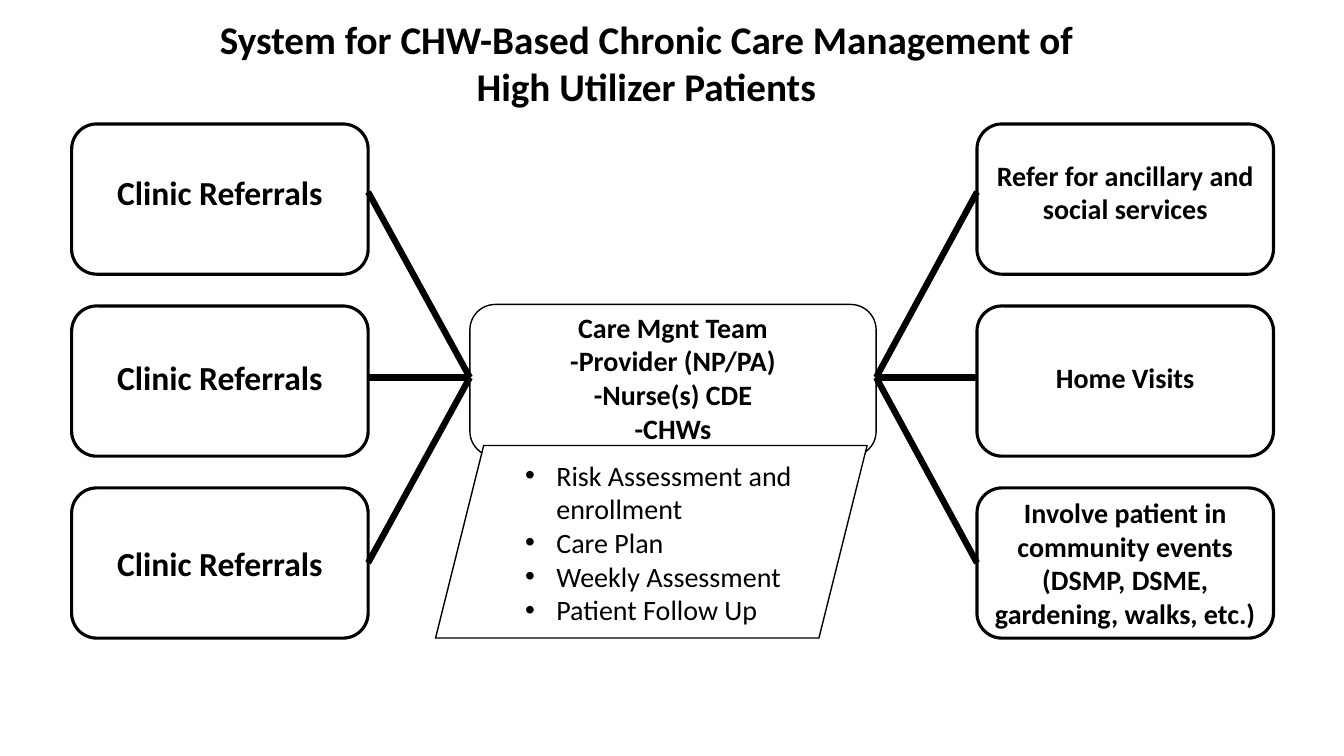
from lxml import etree
from pptx import Presentation
from pptx.dml.color import RGBColor
from pptx.enum.shapes import MSO_CONNECTOR, MSO_SHAPE
from pptx.enum.text import MSO_ANCHOR, MSO_AUTO_SIZE, PP_ALIGN
from pptx.oxml.ns import qn
from pptx.util import Inches, Pt

ROUNDED = MSO_SHAPE.ROUNDED_RECTANGLE
PARALLELOGRAM = MSO_SHAPE.PARALLELOGRAM
STRAIGHT = MSO_CONNECTOR.STRAIGHT
MIDDLE = MSO_ANCHOR.MIDDLE
NO_FIT = MSO_AUTO_SIZE.NONE
CENTER, LEFT = PP_ALIGN.CENTER, PP_ALIGN.LEFT

COLORS = {"ink": "000000", "paper": "FFFFFF"}
FONT = "Calibri"
BULLET_INDENT = Inches(0.31)

SIDE_WIDTH, SIDE_HEIGHT = 22.06, 19.87
REFERRAL_LEFT, SERVICE_LEFT = 5.33, 72.69
TEAM_LEFT, TEAM_WIDTH = 34.96, 30.23
FIRST_BOX_TOP, BOX_STEP = 16.4, 24.07
FIRST_CENTER, CENTER_STEP = 25.4, 24.53
TEAM_CENTER = FIRST_CENTER + CENTER_STEP

REFERRAL = "Clinic Referrals"
REFERRAL_TEXT_HEIGHT = 6.67
SERVICES = [
    ("Refer for ancillary and social services", 10.27),
    ("Home Visits", 5.87),
    ("Involve patient in community events (DSMP, DSME, gardening, walks, etc.)", 19.33),
]
TEAM = ["Care Mgnt Team", "-Provider (NP/PA)", "-Nurse(s) CDE", "-CHWs"]
TASKS = ["Risk Assessment and enrollment", "Care Plan", "Weekly Assessment", "Patient Follow Up"]


def color(name):
    return RGBColor.from_string(COLORS[name])


class SlideBuilder:
    def __init__(self, presentation):
        self.width = presentation.slide_width
        self.height = presentation.slide_height
        self.slide = presentation.slides.add_slide(presentation.slide_layouts[5])

    def across(self, percent):
        return round(self.width * percent / 100)

    def down(self, percent):
        return round(self.height * percent / 100)

    def place(self, left, top, width, height):
        return self.across(left), self.down(top), self.across(width), self.down(height)

    def fill_text(self, shape, lines, size, bold=True, bulleted=False):
        frame = shape.text_frame
        frame_format = {"word_wrap": True, "auto_size": NO_FIT, "vertical_anchor": MIDDLE}
        for name, value in frame_format.items():
            setattr(frame, name, value)
        frame.text = "\n".join(lines)
        for paragraph in frame.paragraphs:
            paragraph.alignment = LEFT if bulleted else CENTER
            if bulleted:
                self.add_bullet(paragraph)
            for name, value in {"name": FONT, "size": Pt(size), "bold": bold}.items():
                setattr(paragraph.font, name, value)
            paragraph.font.color.rgb = color("ink")

    def add_bullet(self, paragraph):
        properties = paragraph._p.get_or_add_pPr()
        properties.set("marL", str(BULLET_INDENT))
        properties.set("indent", str(-BULLET_INDENT))
        etree.SubElement(properties, qn("a:buFont")).set("typeface", "Arial")
        etree.SubElement(properties, qn("a:buChar")).set("char", "•")

    def title(self, area, lines, size):
        shape = self.slide.shapes.title
        sides = zip(("left", "top", "width", "height"), self.place(*area))
        for name, value in sides:
            setattr(shape, name, value)
        self.fill_text(shape, lines, size)

    def box(self, kind, area, line_width):
        shape = self.slide.shapes.add_shape(kind, *self.place(*area))
        shape.shadow.inherit = False
        shape.fill.solid()
        shape.fill.fore_color.rgb = color("paper")
        shape.line.color.rgb = color("ink")
        shape.line.width = Pt(line_width)

    def text(self, area, lines, size, **style):
        shape = self.slide.shapes.add_textbox(*self.place(*area))
        self.fill_text(shape, lines, size, **style)

    def line(self, start, end, line_width=4.5):
        points = [convert(value) for point in (start, end)
                  for convert, value in zip((self.across, self.down), point)]
        connector = self.slide.shapes.add_connector(STRAIGHT, *points)
        connector.line.color.rgb = color("ink")
        connector.line.width = Pt(line_width)
        etree.SubElement(connector._element.spPr, qn("a:effectLst"))

    def side_box(self, left, row, label, text_height, size):
        top = FIRST_BOX_TOP + row * BOX_STEP
        self.box(ROUNDED, (left, top, SIDE_WIDTH, SIDE_HEIGHT), 2.25)
        text_top = FIRST_CENTER + row * CENTER_STEP - text_height / 2
        self.text((left, text_top, SIDE_WIDTH, text_height), [label], size)


def main():
    presentation = Presentation()
    presentation.slide_width = Inches(13.33)
    presentation.slide_height = Inches(7.5)
    builder = SlideBuilder(presentation)

    builder.title((5.33, 1.33, 85.5, 13.87),
                  ["System for CHW-Based Chronic Care Management of",
                   "High Utilizer Patients"], 28)
    for row, (service, text_height) in enumerate(SERVICES):
        builder.side_box(REFERRAL_LEFT, row, REFERRAL, REFERRAL_TEXT_HEIGHT, 24)
        builder.side_box(SERVICE_LEFT, row, service, text_height, 20)

    builder.box(ROUNDED, (TEAM_LEFT, 40.27, TEAM_WIDTH, 20.13), 1)
    builder.text((TEAM_LEFT, 40.27, TEAM_WIDTH, 19.33), TEAM, 20)

    for row in range(len(SERVICES)):
        center = FIRST_CENTER + row * CENTER_STEP
        builder.line((REFERRAL_LEFT + SIDE_WIDTH, center), (TEAM_LEFT, TEAM_CENTER))
        builder.line((TEAM_LEFT + TEAM_WIDTH, TEAM_CENTER), (SERVICE_LEFT, center))

    builder.box(PARALLELOGRAM, (32.41, 58.93, 32.11, 25.47), 1)
    builder.text((38.33, 59.87, 23.33, 23.73), TASKS, 20, bold=False, bulleted=True)
    presentation.save("out.pptx")


if __name__ == "__main__":
    main()
